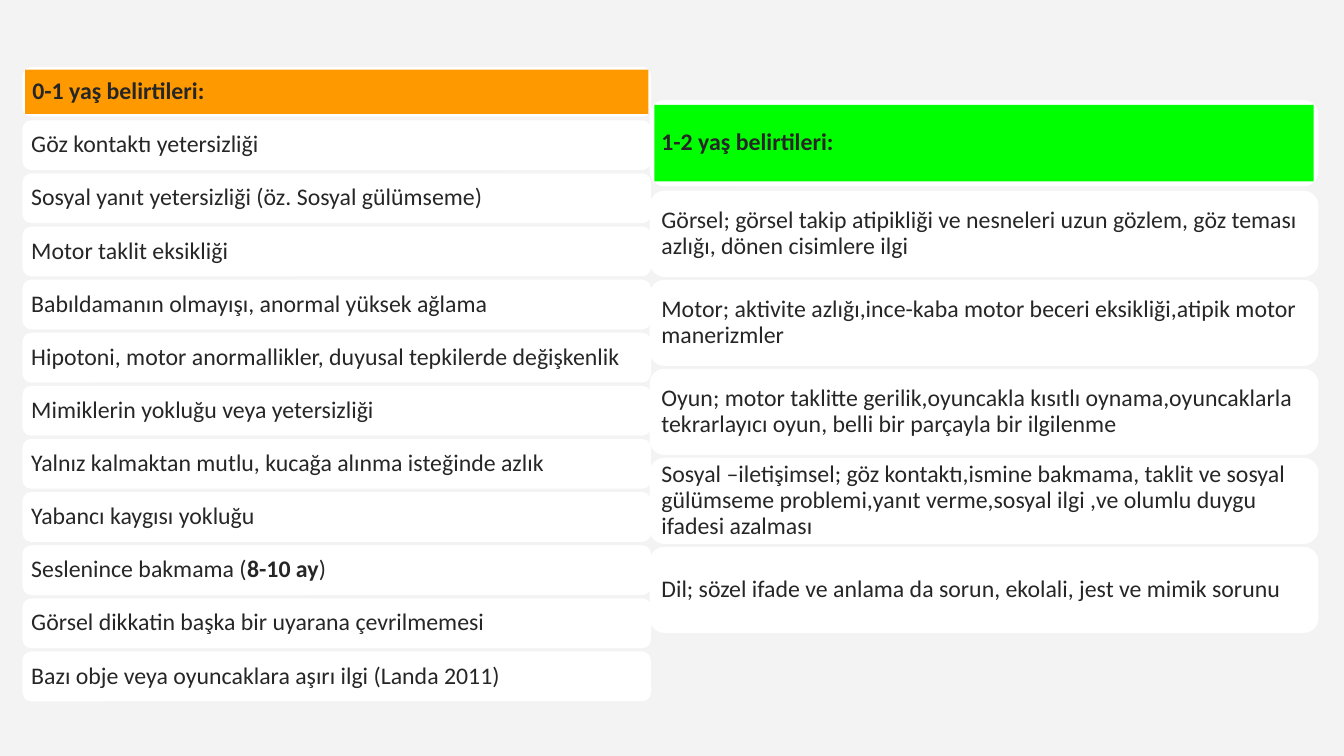
from pptx import Presentation
from pptx.dml.color import RGBColor
from pptx.enum.shapes import MSO_SHAPE
from pptx.enum.text import MSO_ANCHOR, PP_ALIGN
from pptx.util import Inches, Pt

ROUNDED = MSO_SHAPE.ROUNDED_RECTANGLE
RECTANGLE = MSO_SHAPE.RECTANGLE
MIDDLE = MSO_ANCHOR.MIDDLE
LEFT = PP_ALIGN.LEFT

COLORS = {
    "background": "F3F3F3",
    "card": "FFFFFF",
    "text": "262626",
    "orange": "FF9900",
    "green": "00FF00",
}

# Each row is a list of spans; every second span is bold
columns = [
    {
        "left": 0.23, "width": 6.22, "height": 0.48, "inset": 0.02, "margin": 0.06,
        "header_top": 0.67, "rows_top": 1.2, "pitch": 0.527,
        "header": "0-1 yaş belirtileri:", "header_color": "orange",
        "rows": [
            ["Göz kontaktı yetersizliği"],
            ["Sosyal yanıt yetersizliği (öz. Sosyal gülümseme)"],
            ["Motor taklit eksikliği"],
            ["Babıldamanın olmayışı, anormal yüksek ağlama"],
            ["Hipotoni, motor anormallikler, duyusal tepkilerde değişkenlik"],
            ["Mimiklerin yokluğu veya yetersizliği"],
            ["Yalnız kalmaktan mutlu, kucağa alınma isteğinde azlık"],
            ["Yabancı kaygısı yokluğu"],
            ["Seslenince bakmama (", "8-10 ay", ")"],
            ["Görsel dikkatin başka bir uyarana çevrilmemesi"],
            ["Bazı obje veya oyuncaklara aşırı ilgi (Landa 2011)"],
        ],
    },
    {
        "left": 6.45, "width": 6.62, "height": 0.84, "inset": 0.04, "margin": 0.07,
        "header_top": 1.0, "rows_top": 1.9, "pitch": 0.883,
        "header": "1-2 yaş belirtileri:", "header_color": "green",
        "rows": [
            ["Görsel; görsel takip atipikliği ve nesneleri uzun gözlem, göz teması "
             "azlığı, dönen cisimlere ilgi"],
            ["Motor; aktivite azlığı,ince-kaba motor beceri eksikliği,atipik motor "
             "manerizmler"],
            ["Oyun; motor taklitte gerilik,oyuncakla kısıtlı oynama,oyuncaklarla "
             "tekrarlayıcı oyun, belli bir parçayla bir ilgilenme"],
            ["Sosyal –iletişimsel; göz kontaktı,ismine bakmama, taklit ve sosyal "
             "gülümseme problemi,yanıt verme,sosyal ilgi ,ve olumlu duygu "
             "ifadesi azalması"],
            ["Dil; sözel ifade ve anlama da sorun, ekolali, jest ve mimik sorunu"],
        ],
    },
]


def add_block(group, kind, left, top, width, height, color):
    block = group.shapes.add_shape(
        kind, Inches(left), Inches(top), Inches(width), Inches(height))
    block.shadow.inherit = False
    block.fill.solid()
    block.fill.fore_color.rgb = RGBColor.from_string(COLORS[color])
    block.line.fill.background()
    return block


def add_row(group, column, top, spans, color="card", header=False):
    left, width, height = column["left"], column["width"], column["height"]
    inset = column["inset"]

    # Rounded white card
    card = add_block(group, ROUNDED, left, top, width, height, "card")
    card.line.color.rgb = RGBColor.from_string(COLORS["card"])
    card.line.width = Pt(1)

    # Label inside the card
    label = add_block(group, RECTANGLE, left + inset, top + inset,
                      width - 2 * inset, height - 2 * inset, color)
    frame = label.text_frame
    frame.word_wrap = True
    frame.vertical_anchor = MIDDLE
    margin = Inches(0.07 if header else column["margin"])
    frame.margin_left = frame.margin_right = margin
    frame.margin_top = frame.margin_bottom = margin
    para = frame.paragraphs[0]
    para.alignment = LEFT
    para.line_spacing = 0.9
    for index, text in enumerate(spans):
        span = para.add_run()
        span.text = text
        span.font.name = "Calibri"
        span.font.size = Pt(17)
        span.font.bold = header or index % 2 == 1
        span.font.color.rgb = RGBColor.from_string(COLORS["text"])


# Slide and background
deck = Presentation()
deck.slide_width = Inches(13.33)
deck.slide_height = Inches(7.5)
page = deck.slides.add_slide(deck.slide_layouts[6])
page.background.fill.solid()
page.background.fill.fore_color.rgb = RGBColor.from_string(COLORS["background"])

# One group per age column: header, then evenly spaced rows
for column in columns:
    group = page.shapes.add_group_shape()
    add_row(group, column, column["header_top"], [column["header"]],
            column["header_color"], header=True)
    for number, spans in enumerate(column["rows"]):
        add_row(group, column, column["rows_top"] + number * column["pitch"], spans)

deck.save("out.pptx")
